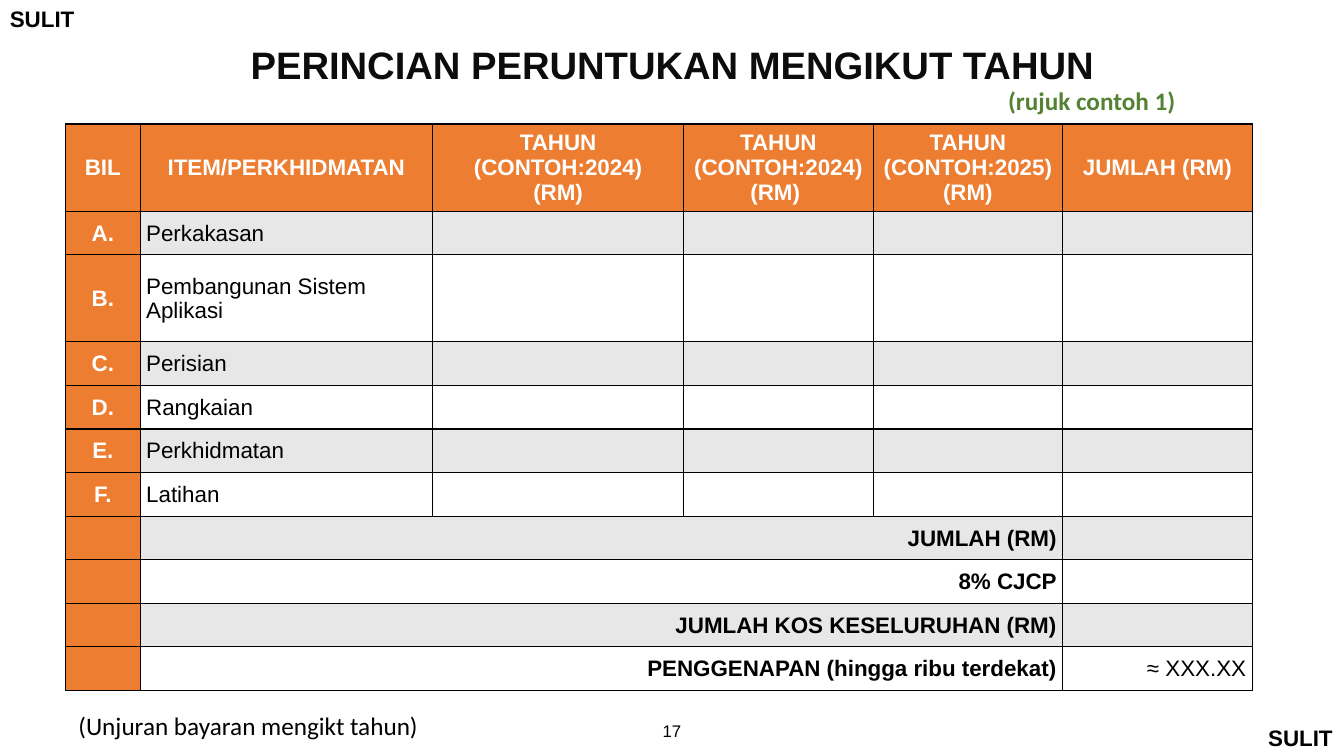
from dataclasses import dataclass

from lxml import etree
from pptx import Presentation
from pptx import util as u
from pptx.dml.color import RGBColor
from pptx.enum import text as t
from pptx.oxml import ns

COLORS = {
    "black": "000000",
    "title": "0C0C0C",
    "white": "FFFFFF",
    "orange": "ED7D31",
    "band": "E7E7E7",
    "green": "548235",
}
SLIDE_WIDTH, SLIDE_HEIGHT = u.Inches(13.33), u.Inches(7.5)
LEFT, CENTER, RIGHT = t.PP_ALIGN.LEFT, t.PP_ALIGN.CENTER, t.PP_ALIGN.RIGHT


@dataclass(frozen=True)
class Area:
    """A rectangle in percent of the slide's width and height."""
    left: float
    top: float
    width: float
    height: float

    def lengths(self) -> tuple[int, int, int, int]:
        return (round(SLIDE_WIDTH * self.left / 100), round(SLIDE_HEIGHT * self.top / 100),
                round(SLIDE_WIDTH * self.width / 100), round(SLIDE_HEIGHT * self.height / 100))


@dataclass(frozen=True)
class Label:
    text: str
    area: Area
    size: float = 16
    font: str = "Arial"
    color: str = "black"
    bold: bool = False
    align: t.PP_ALIGN = LEFT
    wrap: bool = False


@dataclass(frozen=True)
class Item:
    letter: str
    name: str
    row_units: int = 1


TITLE_AREA = Area(16.43, 5.07, 67.14, 8)
TABLE_AREA = Area(4.88, 16.4, 88.3, 74.93)
COLUMN_UNITS = (0.74, 2.9, 2.49, 1.88, 1.88, 1.88)
HEADER_UNITS = 2
HEADERS = (
    "BIL",
    "ITEM/PERKHIDMATAN",
    "TAHUN\n(CONTOH:2024)\n(RM)",
    "TAHUN\n(CONTOH:2024)\n(RM) ",
    "TAHUN\n(CONTOH:2025)\n(RM)",
    "JUMLAH (RM)",
)
ITEMS = (
    Item("A.", "Perkakasan"),
    Item("B.", "Pembangunan Sistem Aplikasi", 2),
    Item("C.", "Perisian"),
    Item("D.", "Rangkaian"),
    Item("E.", "Perkhidmatan"),
    Item("F.", "Latihan"),
)
TOTALS = ("JUMLAH (RM)", "8% CJCP", "JUMLAH KOS KESELURUHAN (RM)",
          "PENGGENAPAN (hingga ribu terdekat)")
ROUNDED_TOTAL = "≈ XXX.XX"
LABELS = (
    Label("SULIT", Area(0, 0, 6.38, 4.93), bold=True),
    Label("SULIT", Area(93.62, 95.07, 6.38, 4.93), bold=True),
    Label("17", Area(48.01, 94.67, 3.98, 5.33), size=12, align=CENTER, wrap=True),
    Label("(rujuk contoh 1)", Area(74.27, 10.67, 14.1, 5.33), size=18,
          font="Calibri", color="green", bold=True),
    Label("(Unjuran bayaran mengikt tahun)", Area(5.1, 93.33, 36, 5.33), size=18,
          font="Calibri", wrap=True),
)


def write_text(frame, content: str, *, size: float = 16, font: str = "Arial",
               color: str = "black", bold: bool = False, align: t.PP_ALIGN = LEFT,
               line_spacing: float = 1.0) -> None:
    """Fill a text frame, one paragraph for each line of content."""
    frame.text = content
    for paragraph in frame.paragraphs:
        paragraph.alignment = align
        paragraph.line_spacing = line_spacing
        paragraph.font.size = u.Pt(size)
        for run in paragraph.runs:
            run.font.size = u.Pt(size)
            run.font.name = font
            run.font.bold = bold
            run.font.color.rgb = RGBColor.from_string(COLORS[color])


def add_title(slide, content: str) -> None:
    title = slide.shapes.title
    title.left, title.top, title.width, title.height = TITLE_AREA.lengths()
    write_text(title.text_frame, content, size=27.3, color="title", bold=True,
               align=CENTER, line_spacing=0.8)
    title.text_frame.auto_size = t.MSO_AUTO_SIZE.NONE
    title.text_frame.vertical_anchor = t.MSO_ANCHOR.MIDDLE


def add_label(slide, label: Label) -> None:
    frame = slide.shapes.add_textbox(*label.area.lengths()).text_frame
    frame.word_wrap = label.wrap
    write_text(frame, label.text, size=label.size, font=label.font, color=label.color,
               bold=label.bold, align=label.align)


def add_borders(cell) -> None:
    properties = cell._tc.get_or_add_tcPr()
    for position, side in enumerate(("lnL", "lnR", "lnT", "lnB")):
        line = etree.Element(ns.qn(f"a:{side}"), w=str(u.Pt(1)))
        fill = etree.SubElement(line, ns.qn("a:solidFill"))
        etree.SubElement(fill, ns.qn("a:srgbClr"), val=COLORS["black"])
        properties.insert(position, line)


def format_cell(cell, fill: str) -> None:
    cell.fill.solid()
    cell.fill.fore_color.rgb = RGBColor.from_string(COLORS[fill])
    cell.vertical_anchor = t.MSO_ANCHOR.MIDDLE
    cell.margin_left = cell.margin_right = u.Inches(0.06)
    cell.margin_top, cell.margin_bottom = u.Inches(0.01), 0
    write_text(cell.text_frame, "")
    add_borders(cell)


def add_budget_table(slide) -> None:
    row_units = [HEADER_UNITS, *(item.row_units for item in ITEMS), *(1 for _ in TOTALS)]
    left, top, width, height = TABLE_AREA.lengths()
    table = slide.shapes.add_table(len(row_units), len(COLUMN_UNITS),
                                   left, top, width, height).table
    for column, units in zip(table.columns, COLUMN_UNITS):
        column.width = round(width * units / sum(COLUMN_UNITS))
    for row, units in zip(table.rows, row_units):
        row.height = round(height * units / sum(row_units))

    for row_index in range(len(row_units)):
        for column_index in range(len(COLUMN_UNITS)):
            if row_index == 0 or column_index == 0:
                fill = "orange"
            else:
                fill = "band" if row_index % 2 else "white"
            format_cell(table.cell(row_index, column_index), fill)

    for column_index, header in enumerate(HEADERS):
        write_text(table.cell(0, column_index).text_frame, header, color="white",
                   bold=True, align=CENTER)
    for row_index, item in enumerate(ITEMS, start=1):
        write_text(table.cell(row_index, 0).text_frame, item.letter, color="white",
                   bold=True, align=CENTER)
        write_text(table.cell(row_index, 1).text_frame, item.name)

    last_column = len(COLUMN_UNITS) - 1
    for row_index, total in enumerate(TOTALS, start=len(ITEMS) + 1):
        cell = table.cell(row_index, 1)
        cell.merge(table.cell(row_index, last_column - 1))
        write_text(cell.text_frame, total, bold=True, align=RIGHT)
    write_text(table.cell(len(row_units) - 1, last_column).text_frame, ROUNDED_TOTAL,
               align=RIGHT)


def main() -> None:
    presentation = Presentation()
    presentation.slide_width, presentation.slide_height = SLIDE_WIDTH, SLIDE_HEIGHT
    slide = presentation.slides.add_slide(presentation.slide_layouts.get_by_name("Title Only"))
    add_title(slide, "PERINCIAN PERUNTUKAN MENGIKUT TAHUN")
    add_budget_table(slide)
    for label in LABELS:
        add_label(slide, label)
    presentation.save("out.pptx")


if __name__ == "__main__":
    main()
